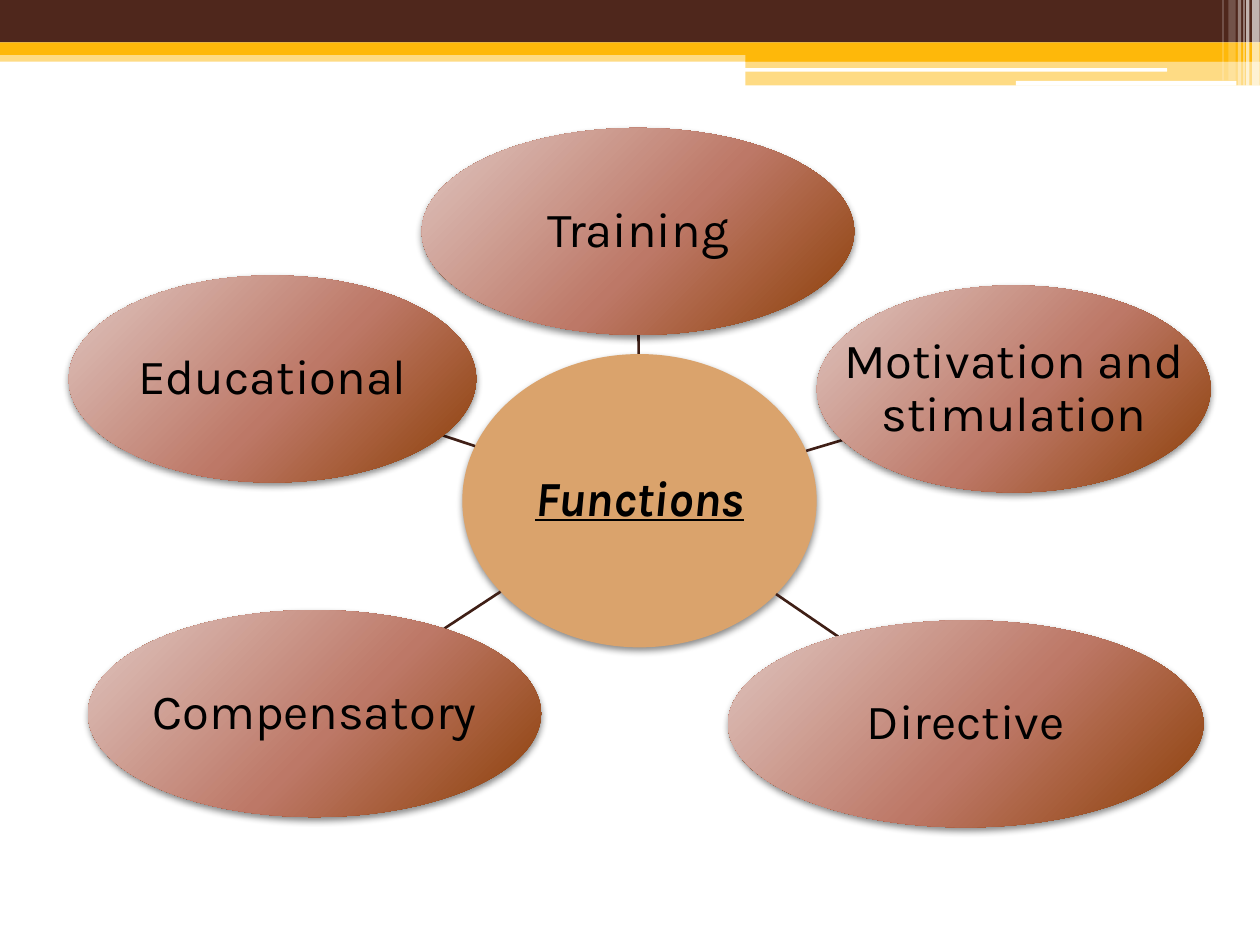
from math import hypot

from lxml.etree import SubElement
from pptx import Presentation
from pptx.dml.color import RGBColor
from pptx.enum.shapes import MSO_CONNECTOR, MSO_SHAPE
from pptx.enum.text import MSO_ANCHOR, PP_ALIGN
from pptx.oxml import parse_xml
from pptx.oxml.ns import nsdecls, qn
from pptx.util import Pt

COLORS = {
    "brown": "4F271C", "amber": "FEB80A", "white": "FFFFFF", "black": "000000",
    "tan": "DAA36C", "line": "3F1F16",
    "light": "E0C7C2", "rose": "BD7867", "rust": "8C3E05",
}
BAR, ROUND = MSO_SHAPE.RECTANGLE, MSO_SHAPE.ROUNDED_RECTANGLE
BANDS = [
    (BAR, 0, 28.8, 720, 6.5, "amber", 50),
    (BAR, 0, 0, 720, 24.2, "brown", 100),
    (BAR, 0, 24.2, 720, 7.2, "amber", 100),
    (BAR, 426, 28.1, 294, 7.2, "amber", 100),
    (BAR, 426, 34.6, 294, 14.2, "amber", 50),
    (ROUND, 425.7, 38.9, 241.2, 2.1, "white", 100),
    (ROUND, 580.5, 46.2, 126, 2.7, "white", 100),
]
STRIPES = [
    (715.5, 4.3, 49, 65), (712, 2, 49, 65), (710.5, 0.7, 49, 60),
    (707.3, 2, 49, 40), (702, 4.2, 46, 20), (698.5, 0.7, 46, 30),
]
HUB = (264.2, 202.3, 202.5, 167.6)
FUNCTIONS = [
    ("Training", 241, 73.1, 247.1),
    ("Motivation and stimulation", 466.8, 163.1, 225),
    ("Directive", 416, 354.5, 271.7),
    ("Compensatory", 50.3, 348.6, 258.9),
    ("Educational", 39.3, 157.4, 232.8),
]
OVAL_HEIGHT = 118.3


def rgb(name):
    """Return the named colour."""
    return RGBColor.from_string(COLORS[name])


def add_band(s, shape, x, y, w, h, color, alpha):
    """Add a flat header band with the given opacity in percent."""
    sp = s.shapes.add_shape(shape, Pt(x), Pt(y), Pt(w), Pt(h))
    sp.shadow.inherit = False
    sp.line.fill.background()
    sp.fill.solid()
    sp.fill.fore_color.rgb = rgb(color)
    if alpha < 100:
        clr = sp.fill._xPr.find(qn("a:solidFill"))[0]
        SubElement(clr, qn("a:alpha"), val=str(alpha * 1000))


def gradient_fill():
    """Return the circular gradient of the outer ovals."""
    stops = "".join(
        f'<a:gs pos="{pos}000"><a:srgbClr val="{COLORS[name]}"/></a:gs>'
        for pos, name in [(0, "light"), (55, "rose"), (100, "rust")])
    return parse_xml(
        f'<a:gradFill {nsdecls("a")}><a:gsLst>{stops}</a:gsLst><a:path path="circle">'
        '<a:fillToRect l="-40000" t="-90000" r="140000" b="190000"/>'
        '</a:path></a:gradFill>')


def add_oval(s, box, color=None):
    """Add a shadowed oval, with a gradient unless a colour is given."""
    sp = s.shapes.add_shape(MSO_SHAPE.OVAL, *map(Pt, box))
    sp.shadow.inherit = False
    sp.line.fill.background()
    sp.fill.solid()
    if color:
        sp.fill.fore_color.rgb = rgb(color)
    else:
        pr = sp._element.spPr
        pr.replace(pr.find(qn("a:solidFill")), gradient_fill())
    effects = sp._element.spPr.find(qn("a:effectLst"))
    shadow = SubElement(effects, qn("a:outerShdw"), blurRad=str(Pt(4)),
                        dist=str(Pt(2)), dir="5400000", rotWithShape="0")
    clr = SubElement(shadow, qn("a:srgbClr"), val=COLORS["black"])
    SubElement(clr, qn("a:alpha"), val="45000")


def add_label(s, box, text, strong=False):
    """Add a centred label that spans the full width of its oval."""
    tf = s.shapes.add_textbox(*map(Pt, box)).text_frame
    tf.word_wrap = True
    tf.vertical_anchor = MSO_ANCHOR.MIDDLE
    tf.margin_left = tf.margin_right = tf.margin_top = tf.margin_bottom = Pt(1.4)
    p = tf.paragraphs[0]
    p.text = text
    p.alignment = PP_ALIGN.CENTER
    p.line_spacing = 0.9
    font = p.font
    font.name, font.size, font.color.rgb = "Karla", Pt(28), rgb("black")
    if strong:
        font.bold = font.italic = font.underline = True


def center(box):
    """Return the middle of a box."""
    x, y, w, h = box
    return x + w / 2, y + h / 2


def edge_point(box, target):
    """Return where the line from an oval's centre to a target leaves the oval."""
    cx, cy = center(box)
    dx, dy = target[0] - cx, target[1] - cy
    t = 1 / hypot(dx / (box[2] / 2), dy / (box[3] / 2))
    return cx + dx * t, cy + dy * t


def add_spoke(s, box):
    """Add the line between the hub and an outer oval."""
    ends = edge_point(HUB, center(box)) + edge_point(box, center(HUB))
    c = s.shapes.add_connector(MSO_CONNECTOR.STRAIGHT, *map(Pt, ends))
    c.line.color.rgb = rgb("line")
    c.line.width = Pt(1.5)
    SubElement(c._element.spPr, qn("a:effectLst"))


def main():
    """Build the slide and save it."""
    prs = Presentation()
    prs.slide_width, prs.slide_height = Pt(720), Pt(540)
    s = prs.slides.add_slide(prs.slide_layouts[6])
    for band in BANDS:
        add_band(s, *band)
    for x, w, h, alpha in STRIPES:
        add_band(s, BAR, x, 0, w, h, "white", alpha)
    add_oval(s, HUB, "tan")
    add_label(s, HUB, "Functions", strong=True)
    for text, x, y, w in FUNCTIONS:
        box = (x, y, w, OVAL_HEIGHT)
        add_spoke(s, box)
        add_oval(s, box)
        add_label(s, box, text)
    prs.save("out.pptx")


if __name__ == "__main__":
    main()
